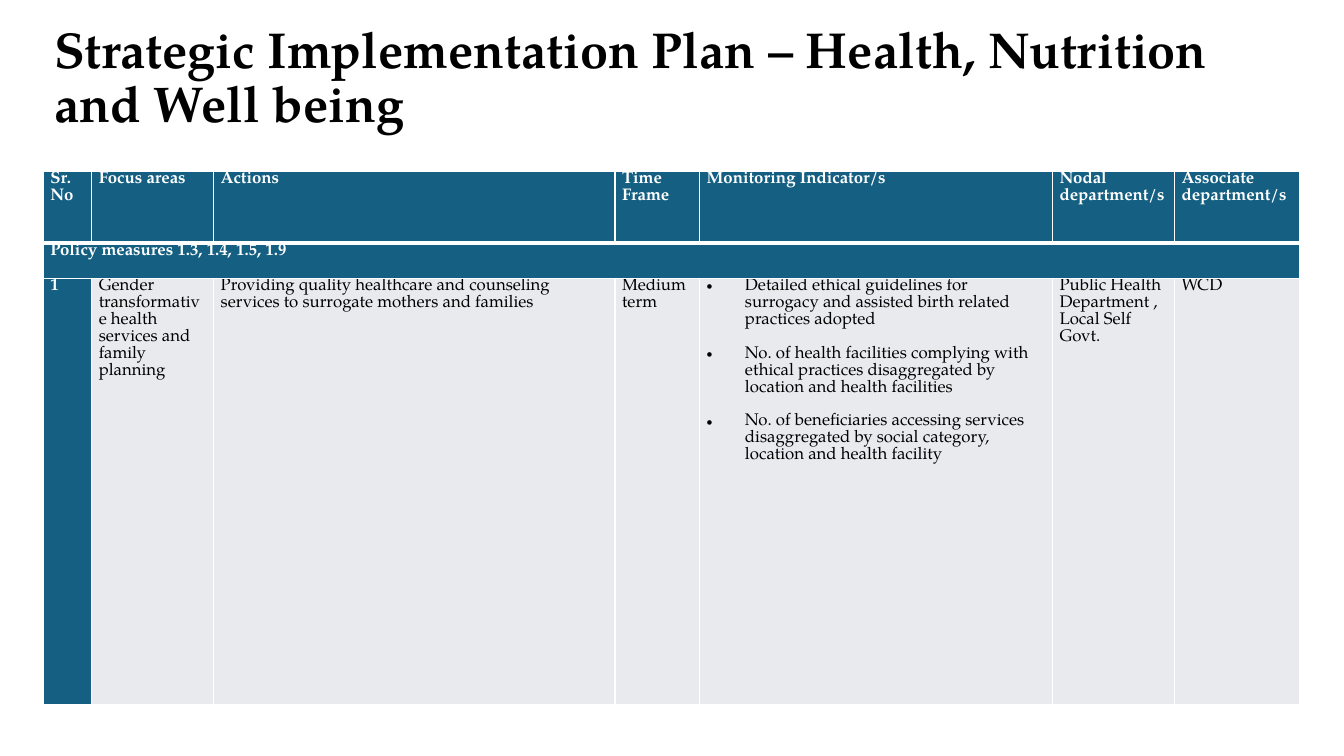
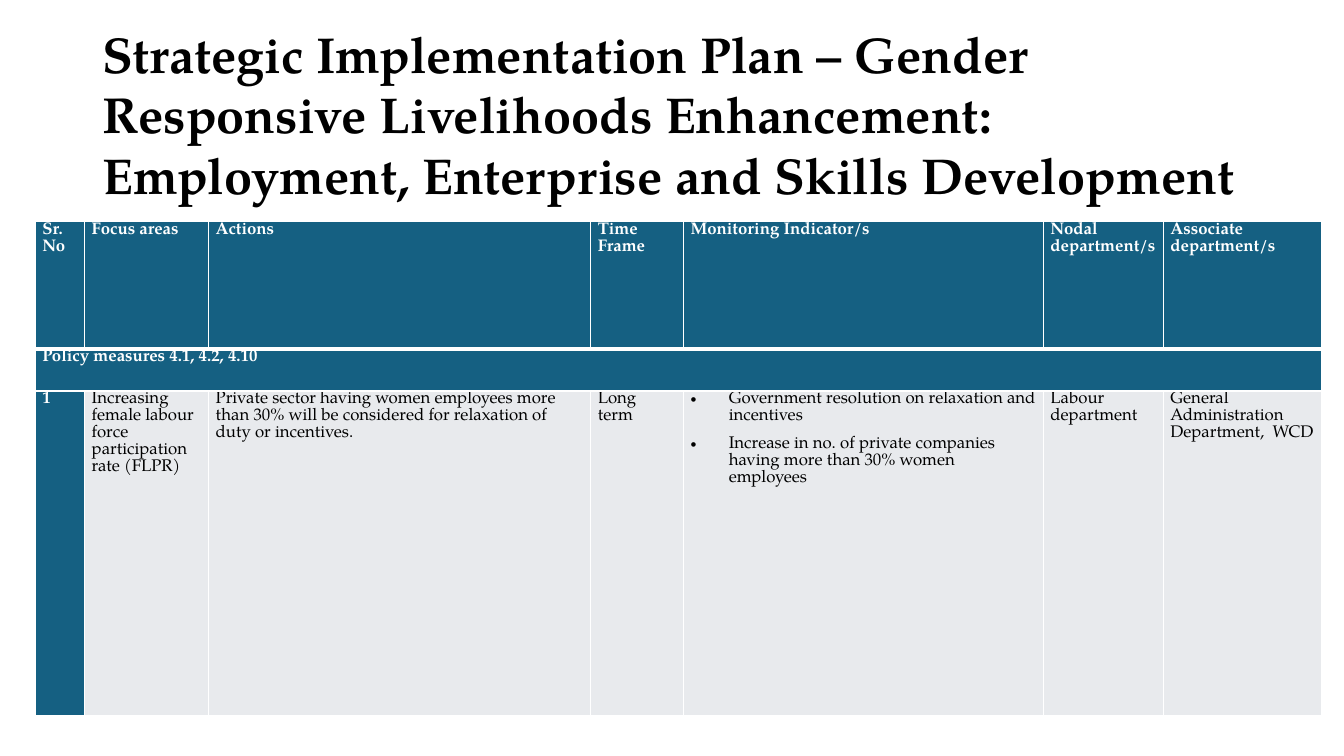
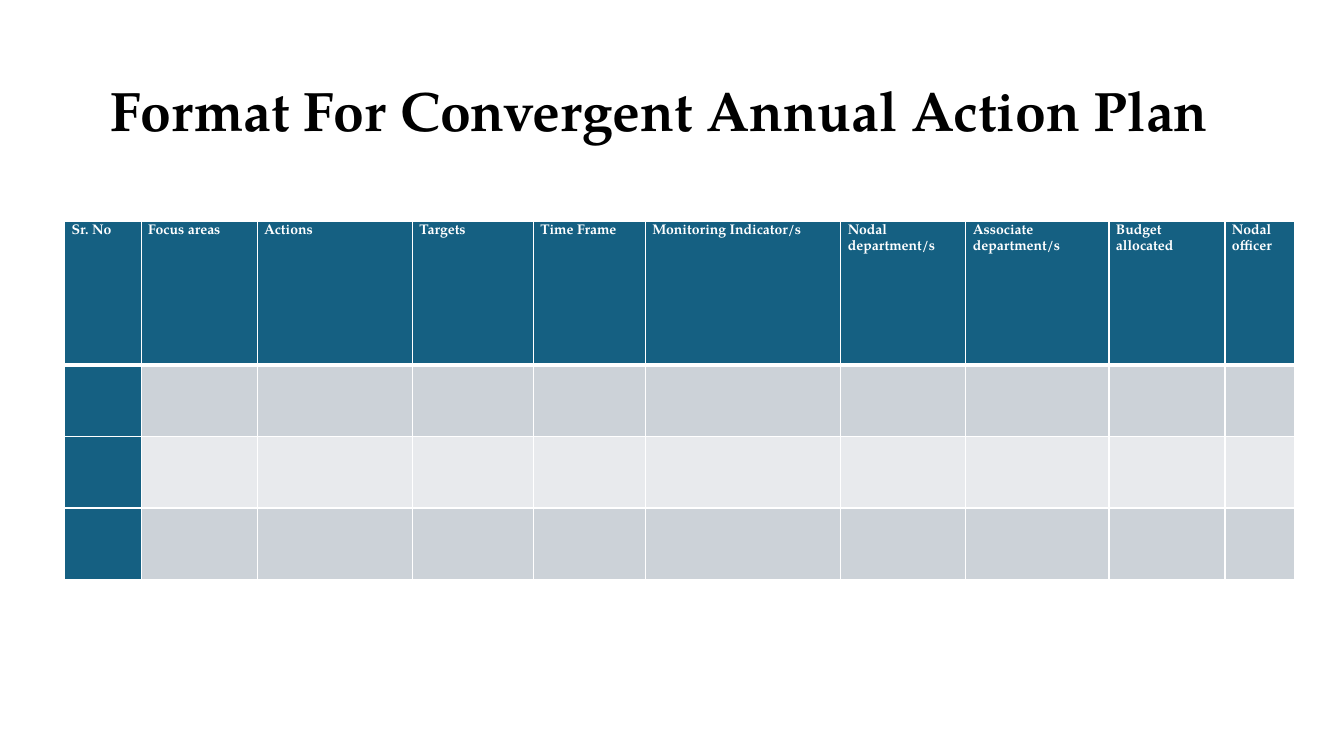
from pptx import Presentation
from pptx.dml.color import RGBColor
from pptx.enum.text import MSO_ANCHOR
from pptx.oxml import parse_xml
from pptx.oxml.ns import nsdecls
from pptx.util import Inches, Pt

FONT = "TeX Gyre Pagella"
BLACK, WHITE = "000000", "FFFFFF"
TEAL, PALE, GREY = "156082", "E8EAED", "CCD2D8"
CELL_INSET = 0.07
BULLET_INDENT = 0.38
THIN, THICK = 1, 3

PLAN_HEADINGS = ["Sr. No", "Focus areas", "Actions", "Time Frame",
                 "Monitoring Indicator/s", "Nodal department/s",
                 "Associate department/s"]
ANNUAL_HEADINGS = ["Sr. No", "Focus areas", "Actions", "Targets", "Time Frame",
                   "Monitoring Indicator/s", "Nodal department/s",
                   "Associate department/s", "Budget allocated", "Nodal officer"]

# A list inside a row is a bulleted cell; "band" is a row merged across the table.
# Boxes are left, top, width, height in inches; sizes and line pitches in points.
SLIDES = [
    {
        "title": {
            "text": "Strategic Implementation Plan – Health, Nutrition and Well being",
            "box": (0.44, 0.4, 12.46, 1.3), "size": 36, "pitch": 39, "lift": 39,
        },
        "table": {
            "at": (0.43, 1.7), "size": 12, "pitch": 12.1, "after": 0, "bullet_after": 12.1,
            "columns": [0.48, 1.21, 3.98, 0.84, 3.5, 1.21, 1.24],
            "heights": [0.71, 0.35, 4.23],
            "headings": PLAN_HEADINGS,
            "band": "Policy measures 1.3, 1.4, 1.5, 1.9",
            "rows": [[
                "1",
                "Gender transformative health services and family planning",
                "Providing quality healthcare and counseling services to "
                "surrogate mothers and families",
                "Medium term",
                ["Detailed ethical guidelines for surrogacy and assisted birth "
                 "related practices adopted",
                 "No. of health facilities complying with ethical practices "
                 "disaggregated by location and health facilities",
                 "No. of beneficiaries accessing services disaggregated by "
                 "social category, location and health facility"],
                "Public Health Department , Local Self Govt.",
                "WCD",
            ]],
        },
    },
    {
        "title": {
            "text": "Strategic Implementation Plan – Gender Responsive Livelihoods "
                    "Enhancement: Employment, Enterprise and Skills Development",
            "box": (0.92, 0.4, 11.5, 1.45), "size": 36, "pitch": 43.2, "lift": 0,
        },
        "table": {
            "at": (0.35, 2.2), "size": 12, "pitch": 12.1, "after": 8, "bullet_after": 8,
            "columns": [0.49, 1.23, 3.79, 0.92, 3.57, 1.19, 1.57],
            "heights": [1.26, 0.42, 3.22],
            "headings": PLAN_HEADINGS,
            "band": "Policy measures 4.1, 4.2, 4.10",
            "rows": [[
                "1",
                "Increasing female labour force participation rate (FLPR)",
                "Private sector having women employees more than 30% will be "
                "considered for relaxation of duty or incentives.",
                "Long  term",
                ["Government resolution on relaxation and incentives",
                 "Increase in no. of private companies having more than 30% "
                 "women employees"],
                "Labour department",
                "General Administration Department,  WCD",
            ]],
        },
    },
    {
        "title": {
            "text": "Format For Convergent Annual Action Plan",
            "box": (1, 0.44, 11.5, 1.95), "size": 39.6, "pitch": 47.5, "lift": 47.5,
        },
        "table": {
            "at": (0.64, 2.2), "size": 10, "pitch": 11.6, "after": 0, "bullet_after": 0,
            "columns": [0.76, 1.15, 1.54, 1.2, 1.11, 1.94, 1.24, 1.42, 1.15, 0.69],
            "heights": [1.42, 0.71, 0.71, 0.71],
            "headings": ANNUAL_HEADINGS,
            "band": None,
            "rows": [[""] * len(ANNUAL_HEADINGS)] * 3,
        },
    },
]


def rgb(hex_color):
    return RGBColor.from_string(hex_color)


def style_paragraph(paragraph, size, pitch, color, bold):
    paragraph.line_spacing = Pt(pitch)
    for run in paragraph.runs:
        run.font.name = FONT
        run.font.size = Pt(size)
        run.font.bold = bold
        run.font.color.rgb = rgb(color)


def add_title(slide, title):
    """Add the middle-anchored title; lift is room kept free below it, in points."""
    box = slide.shapes.add_textbox(*map(Inches, title["box"]))
    frame = box.text_frame
    frame.word_wrap = True
    frame.vertical_anchor = MSO_ANCHOR.MIDDLE
    frame.margin_bottom = Inches(0.05) + Pt(title["lift"])
    frame.text = title["text"]
    style_paragraph(frame.paragraphs[0], title["size"], title["pitch"], BLACK, True)


def add_bullet(paragraph):
    properties = paragraph._p.get_or_add_pPr()
    properties.set("marL", str(Inches(BULLET_INDENT)))
    properties.set("indent", str(-Inches(BULLET_INDENT)))
    properties.append(parse_xml(f'<a:buFont {nsdecls("a")} typeface="Arial"/>'))
    properties.append(parse_xml(f'<a:buChar {nsdecls("a")} char="•"/>'))


def set_borders(cell, top, bottom):
    """Draw white borders; they must precede the fill in the cell properties."""
    widths = {"lnL": THIN, "lnR": THIN, "lnT": top, "lnB": bottom}
    properties = cell._tc.get_or_add_tcPr()
    for position, (side, width) in enumerate(widths.items()):
        properties.insert(position, parse_xml(
            f'<a:{side} {nsdecls("a")} w="{Pt(width)}"><a:solidFill>'
            f'<a:srgbClr val="{WHITE}"/></a:solidFill></a:{side}>'))


def fill_cell(cell, content, spec_table, fill, emphasis):
    bulleted = isinstance(content, list)
    cell.margin_left = cell.margin_right = Inches(CELL_INSET)
    cell.margin_top = cell.margin_bottom = 0
    cell.fill.solid()
    cell.fill.fore_color.rgb = rgb(fill)
    cell.text_frame.text = "\n".join(content) if bulleted else content
    paragraphs = cell.text_frame.paragraphs
    for paragraph in paragraphs:
        style_paragraph(paragraph, spec_table["size"], spec_table["pitch"],
                        WHITE if emphasis else BLACK, emphasis)
        last = paragraph is paragraphs[-1]
        gap = spec_table["bullet_after"] if bulleted and not last else spec_table["after"]
        paragraph.space_after = Pt(gap)
        if bulleted:
            add_bullet(paragraph)


def add_plan_table(slide, plan):
    columns, heights = plan["columns"], plan["heights"]
    band = [[plan["band"]] + [""] * (len(columns) - 1)] if plan["band"] else []
    grid = [plan["headings"]] + band + plan["rows"]
    left, top = plan["at"]
    table = slide.shapes.add_table(
        len(grid), len(columns), Inches(left), Inches(top),
        Inches(sum(columns)), Inches(sum(heights))).table
    table.first_row = table.horz_banding = False
    for column, width in zip(table.columns, columns):
        column.width = Inches(width)
    for row, height in zip(table.rows, heights):
        row.height = Inches(height)

    label_rows = 1 + len(band)
    for r, contents in enumerate(grid):
        row_fill = GREY if r % 2 else PALE
        for c, content in enumerate(contents):
            emphasis = r < label_rows or c == 0
            cell = table.cell(r, c)
            fill_cell(cell, content, plan, TEAL if emphasis else row_fill, emphasis)
            set_borders(cell, top=THICK if r == 1 else THIN,
                        bottom=THICK if r == 0 else THIN)
    if band:
        table.cell(1, 0).merge(table.cell(1, len(columns) - 1))


def main():
    deck = Presentation()
    deck.slide_width, deck.slide_height = Inches(13.33), Inches(7.5)
    blank = deck.slide_layouts[6]
    for content in SLIDES:
        slide = deck.slides.add_slide(blank)
        add_title(slide, content["title"])
        add_plan_table(slide, content["table"])
    deck.save("out.pptx")


if __name__ == "__main__":
    main()
